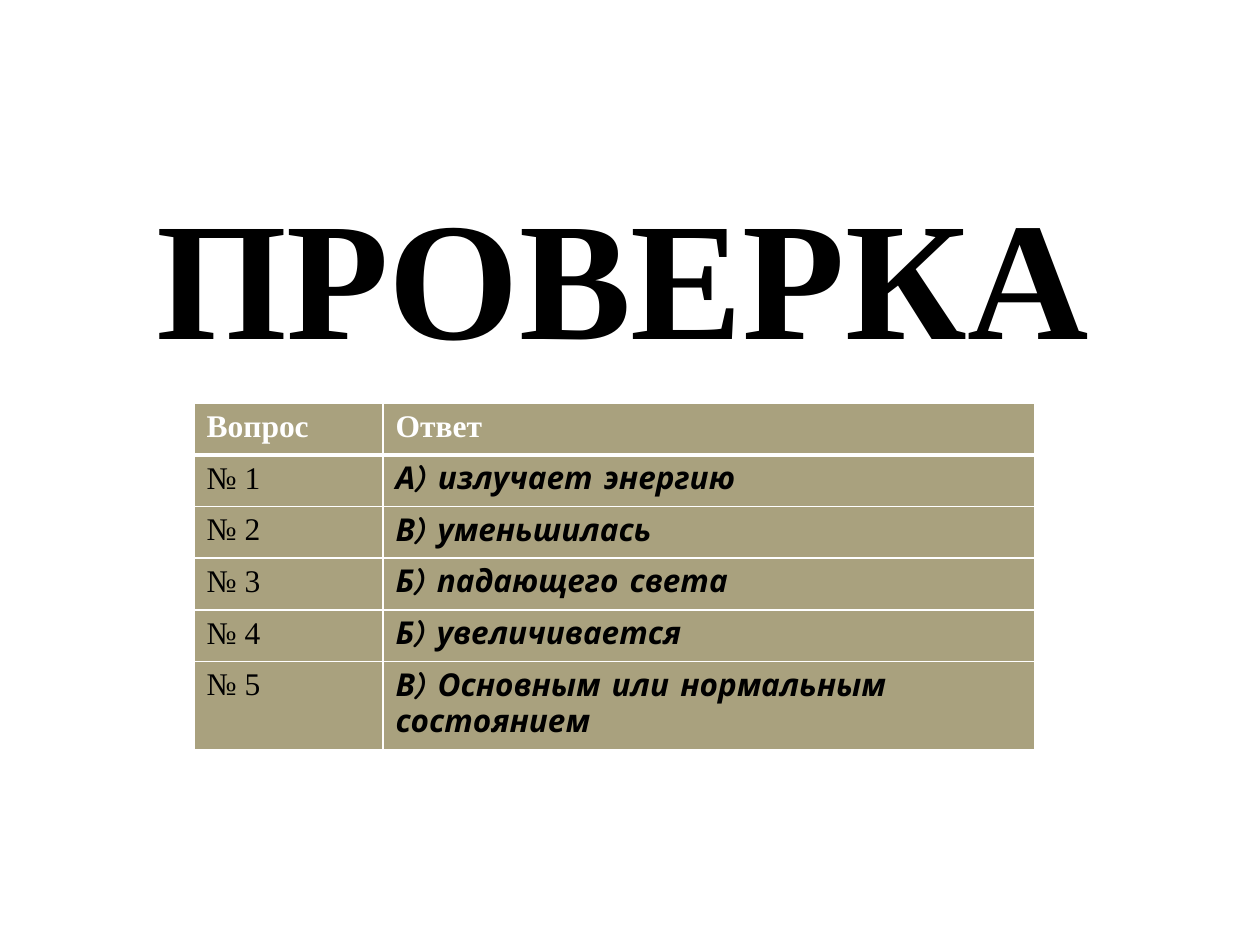
from typing import NamedTuple

from lxml.etree import SubElement
from pptx import Presentation
from pptx.dml.color import RGBColor
from pptx.enum.text import MSO_ANCHOR as Anchor, MSO_AUTO_SIZE as AutoSize, PP_ALIGN as Align
from pptx.oxml.ns import qn
from pptx.util import Inches, Pt

COLORS = {"black": "000000", "white": "FFFFFF", "khaki": "A9A17E"}
SERIF = "Times New Roman"
TITLE = {"name": SERIF, "size": Pt(96), "bold": True, "italic": False}
HEADER = {"name": SERIF, "size": Pt(18), "bold": True, "italic": False}
NUMBER = {**HEADER, "bold": False}
ANSWER = {"name": "Comic Neue", "size": Pt(18), "bold": True, "italic": True}


class Entry(NamedTuple):
    question: str
    answer: str


ENTRIES = [
    Entry("№ 1", "А) излучает энергию"),
    Entry("№ 2", "В) уменьшилась"),
    Entry("№ 3", "Б) падающего света"),
    Entry("№ 4", "Б) увеличивается"),
    Entry("№ 5", "В) Основным или нормальным состоянием"),
]


def write_text(text_frame, text: str, style: dict, color: str) -> None:
    paragraph = text_frame.paragraphs[0]
    paragraph.alignment = Align.LEFT
    run = paragraph.add_run()
    run.text = text
    for attribute, value in style.items():
        setattr(run.font, attribute, value)
    run.font.color.rgb = RGBColor.from_string(COLORS[color])


def add_borders(cell, widths: dict[str, float]) -> None:
    properties = cell._tc.get_or_add_tcPr()
    for side, width in widths.items():
        line = SubElement(properties, qn(f"a:ln{side}"), w=str(Pt(width)))
        fill = SubElement(line, qn("a:solidFill"))
        SubElement(fill, qn("a:srgbClr"), val=COLORS["white"])


def format_cell(cell, text: str, style: dict, color: str, widths: dict[str, float]) -> None:
    add_borders(cell, widths)
    cell.fill.solid()
    cell.fill.fore_color.rgb = RGBColor.from_string(COLORS["khaki"])
    write_text(cell.text_frame, text, style, color)


def add_title(slide, text: str) -> None:
    title = slide.shapes.title
    title.left, title.top = Inches(1.14), Inches(1.31)
    title.width, title.height = Inches(7.87), Inches(1.72)
    text_frame = title.text_frame
    text_frame.word_wrap = True
    text_frame.auto_size = AutoSize.SHAPE_TO_FIT_TEXT
    text_frame.vertical_anchor = Anchor.TOP
    write_text(text_frame, text, TITLE, "black")


def add_answer_table(slide, entries: list[Entry]) -> None:
    rows = [Entry("Вопрос", "Ответ"), *entries]
    row_height = Inches(0.41)
    frame = slide.shapes.add_table(
        len(rows), 2, Inches(1.54), Inches(3.2), Inches(6.67), row_height * len(rows)
    )
    table = frame.table
    for column, width in zip(table.columns, (1.5, 5.17)):
        column.width = Inches(width)
    for row_index, entry in enumerate(rows):
        table.rows[row_index].height = row_height
        is_header = row_index == 0
        styles = (HEADER, HEADER) if is_header else (NUMBER, ANSWER)
        color = "white" if is_header else "black"
        widths = {"L": 1, "R": 1, "T": 3 if row_index == 1 else 1, "B": 3 if is_header else 1}
        for column_index, (text, style) in enumerate(zip(entry, styles)):
            format_cell(table.cell(row_index, column_index), text, style, color, widths)


def main() -> None:
    presentation = Presentation()
    presentation.slide_width, presentation.slide_height = Inches(10), Inches(7.5)
    slide = presentation.slides.add_slide(presentation.slide_layouts[5])
    add_title(slide, "ПРОВЕРКА")
    add_answer_table(slide, ENTRIES)
    presentation.save("out.pptx")


if __name__ == "__main__":
    main()
